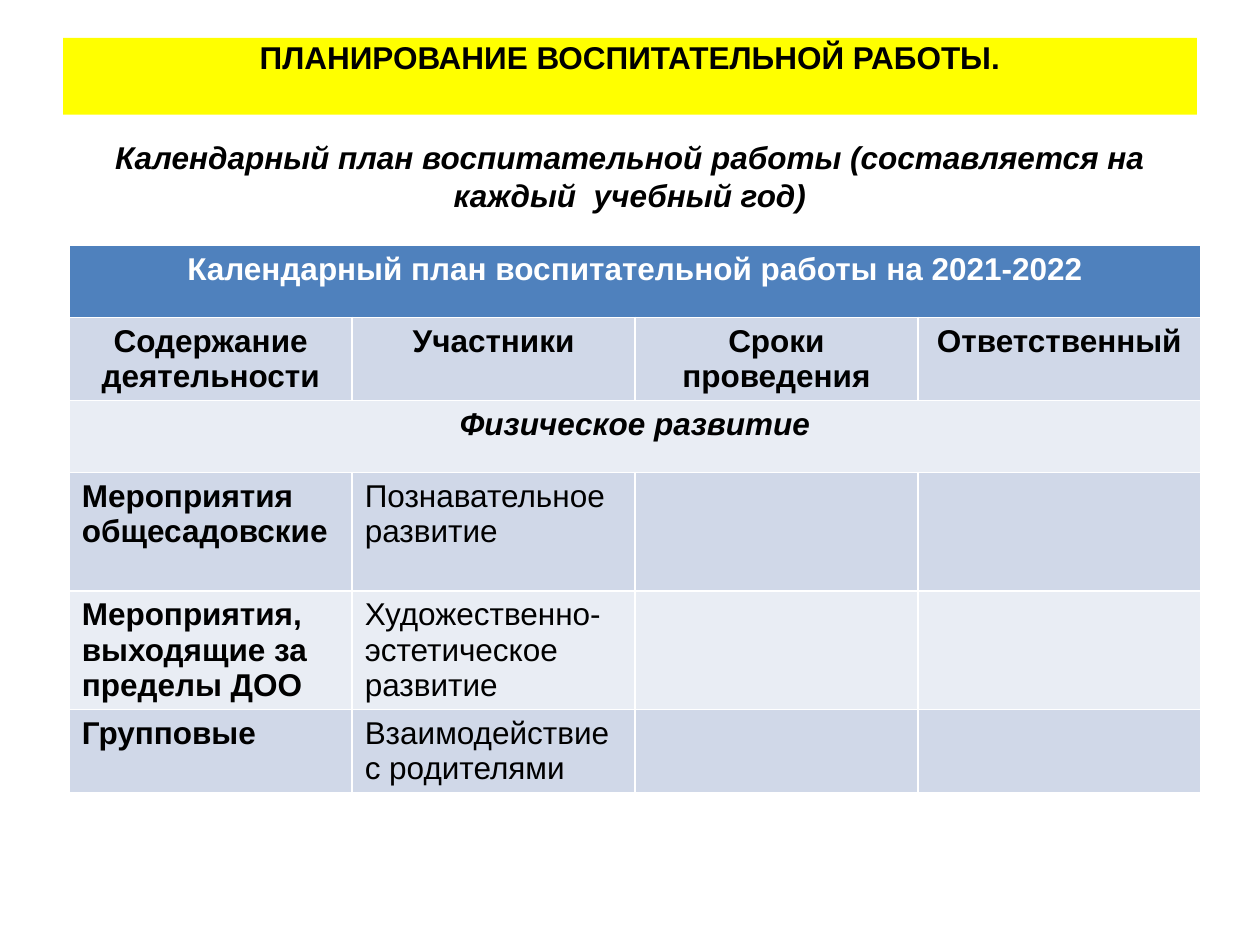
from pptx import Presentation
from pptx.dml.color import RGBColor
from pptx.enum import text
from pptx.util import Inches, Pt

BLACK = RGBColor(0x00, 0x00, 0x00)
WHITE = RGBColor(0xFF, 0xFF, 0xFF)
YELLOW = RGBColor(0xFF, 0xFF, 0x00)
HEADER_BLUE = RGBColor(0x4F, 0x81, 0xBD)
BAND_DARK = RGBColor(0xD0, 0xD8, 0xE8)
BAND_LIGHT = RGBColor(0xE9, 0xED, 0xF4)

CENTER, LEFT = text.PP_ALIGN.CENTER, text.PP_ALIGN.LEFT

PLAN_ROWS = [
    ["Календарный план воспитательной работы на 2021-2022"],
    ["Содержание деятельности", "Участники", "Сроки проведения", "Ответственный"],
    ["Физическое развитие"],
    ["Мероприятия\nобщесадовские", "Познавательное развитие", "", ""],
    ["Мероприятия, выходящие за пределы ДОО",
     "Художественно-эстетическое развитие", "", ""],
    ["Групповые", "Взаимодействие с родителями", "", ""],
]
ROW_HEIGHTS = [0.57, 0.66, 0.57, 0.94, 0.94, 0.66]
HEADING_ROWS = 3


def write(tf, content, align=CENTER, color=BLACK, bold=True, italic=False):
    tf.text = content
    for p in tf.paragraphs:
        p.alignment = align
        for r in p.runs:
            font = r.font
            font.name, font.size = "Arial", Pt(18)
            font.bold, font.italic = bold, italic
            font.color.rgb = color


def set_frame(tf, anchor):
    tf.word_wrap = True
    tf.auto_size = text.MSO_AUTO_SIZE.NONE
    tf.vertical_anchor = anchor
    tf.margin_left = tf.margin_right = tf.margin_top = tf.margin_bottom = 0


def add_title(slide, left, top, width, height):
    title = slide.shapes.title
    title.left, title.top = Inches(left), Inches(top)
    title.width, title.height = Inches(width), Inches(height)
    title.fill.solid()
    title.fill.fore_color.rgb = YELLOW
    set_frame(title.text_frame, text.MSO_ANCHOR.TOP)
    write(title.text_frame, "ПЛАНИРОВАНИЕ ВОСПИТАТЕЛЬНОЙ РАБОТЫ.")


def add_subtitle(slide, left, top, width, height):
    box = slide.shapes.add_textbox(
        Inches(left), Inches(top), Inches(width), Inches(height))
    set_frame(box.text_frame, text.MSO_ANCHOR.MIDDLE)
    write(box.text_frame,
          "Календарный план воспитательной работы "
          "(составляется на каждый  учебный год)", italic=True)


def add_plan_table(slide, left, top, width):
    """Calendar plan; rows with a single entry span all columns."""
    columns = max(len(row) for row in PLAN_ROWS)
    table = slide.shapes.add_table(
        len(PLAN_ROWS), columns, Inches(left), Inches(top),
        Inches(width), Inches(sum(ROW_HEIGHTS))).table
    for column in table.columns:
        column.width = Inches(width / columns)

    for i, (entries, height) in enumerate(zip(PLAN_ROWS, ROW_HEIGHTS)):
        table.rows[i].height = Inches(height)
        band = HEADER_BLUE if i == 0 else BAND_DARK if i % 2 else BAND_LIGHT
        for cell in table.rows[i].cells:
            cell.fill.solid()
            cell.fill.fore_color.rgb = band
        spans = len(entries) == 1
        if spans:
            table.cell(i, 0).merge(table.cell(i, columns - 1))
        heading = i < HEADING_ROWS
        for j, entry in enumerate(entries):
            write(table.cell(i, j).text_frame, entry,
                  align=CENTER if heading else LEFT,
                  color=WHITE if i == 0 else BLACK,
                  bold=heading or j == 0,
                  italic=spans and i > 0)


def main():
    prs = Presentation()
    prs.slide_width, prs.slide_height = Inches(10), Inches(7.5)
    slide = prs.slides.add_slide(prs.slide_layouts.get_by_name("Title Only"))
    add_title(slide, 0.5, 0.3, 9, 0.61)
    add_subtitle(slide, 0.5, 1.09, 9, 0.61)
    add_plan_table(slide, 0.55, 1.95, 8.98)
    prs.save("out.pptx")


if __name__ == "__main__":
    main()
